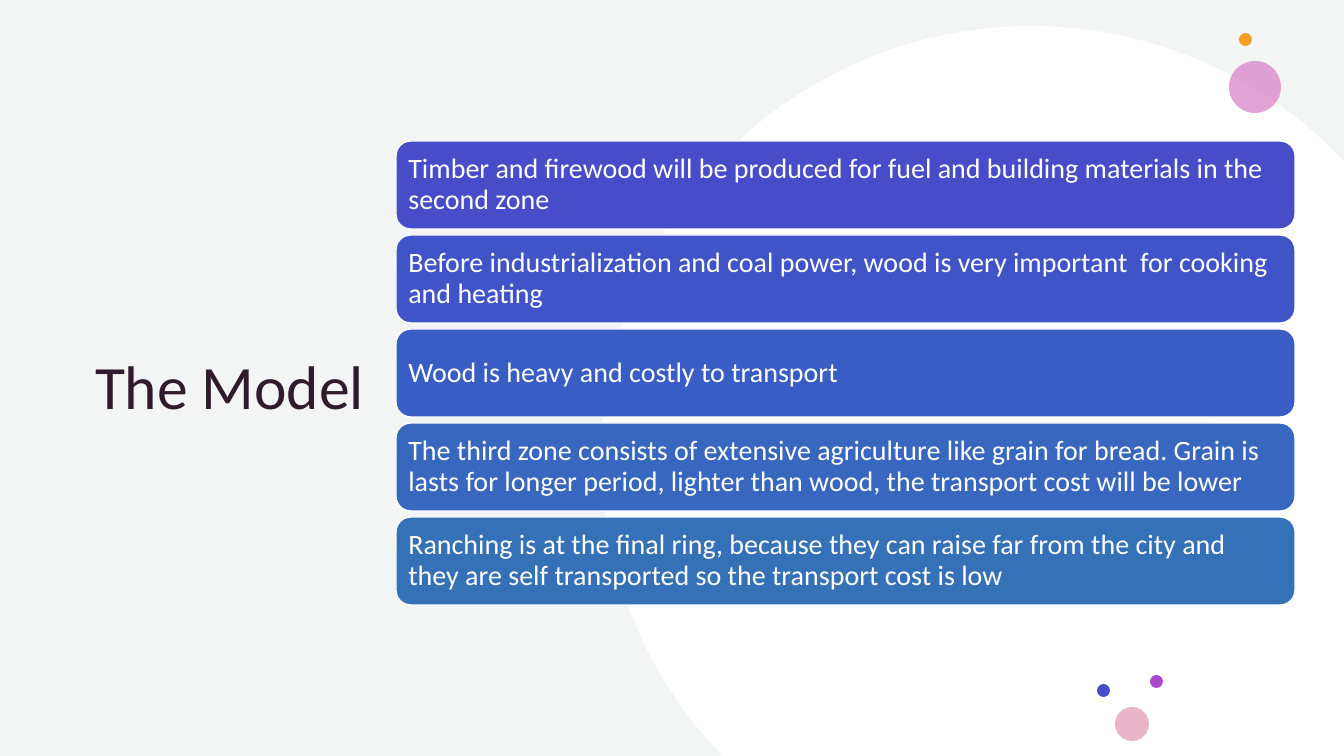
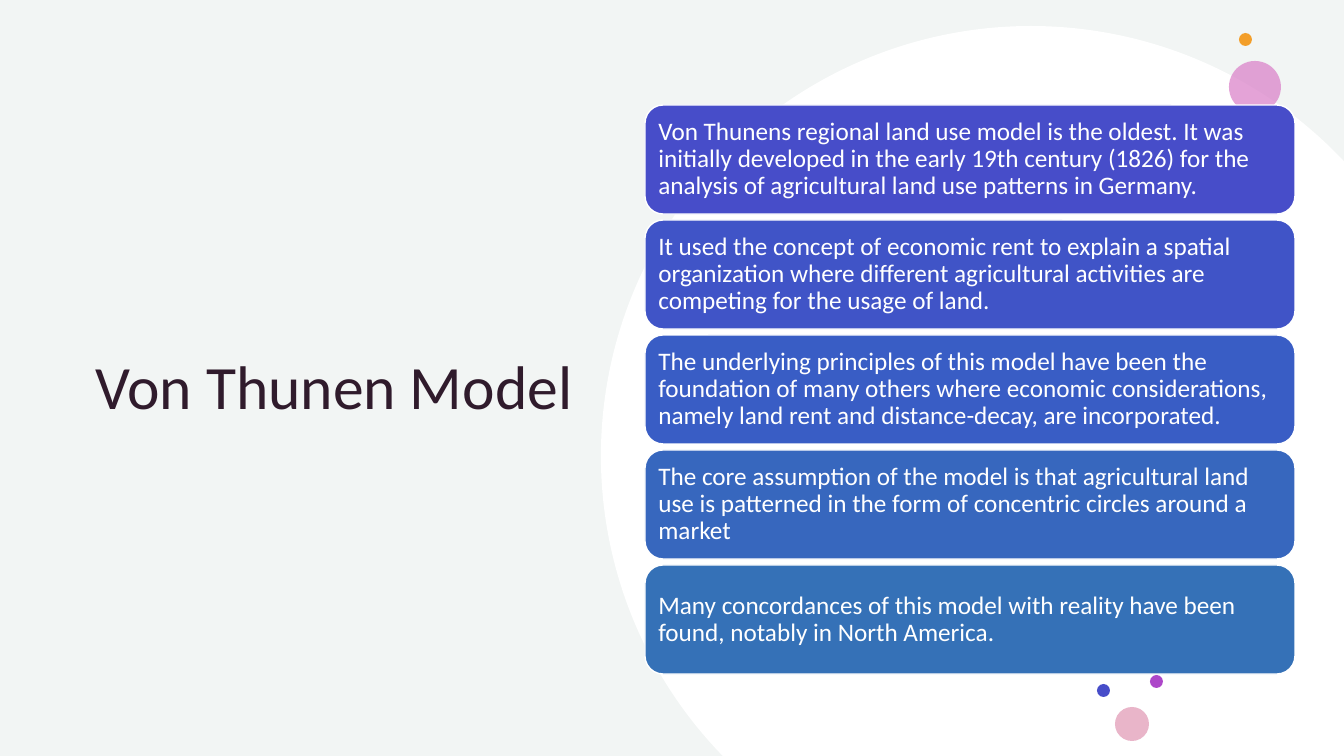
from math import acos, asin, cos, degrees, radians, sin

from lxml import etree
from pptx import Presentation
from pptx.dml.color import RGBColor
from pptx.enum.shapes import MSO_SHAPE
from pptx.enum.text import MSO_ANCHOR, PP_ALIGN
from pptx.oxml.ns import qn
from pptx.util import Pt

OVAL, CARD = MSO_SHAPE.OVAL, MSO_SHAPE.ROUNDED_RECTANGLE
MIDDLE, LEFT = MSO_ANCHOR.MIDDLE, PP_ALIGN.LEFT

# Content
SLIDES = [
    {
        "title": "The Model",
        "cards": {"left": 396, "top": 141, "width": 899, "height": 88, "pitch": 94},
        "size": 20,
        "inset": 8,
        "points": [
            "Timber and firewood will be produced for fuel and building materials in the second zone",
            "Before industrialization and coal power, wood is very important  for cooking and heating",
            "Wood is heavy and costly to transport",
            "The third zone consists of extensive agriculture like grain for bread. "
            "Grain is lasts for longer period, lighter than wood, the transport cost will be lower",
            "Ranching is at the final ring, because they can raise far from the city "
            "and they are self transported so the transport cost is low",
        ],
    },
    {
        "title": "Von Thunen Model",
        "cards": {"left": 645, "top": 105, "width": 650, "height": 109, "pitch": 115},
        "size": 18,
        "inset": 8,
        "points": [
            "Von Thunens regional land use model is the oldest. It was initially developed "
            "in the early 19th century (1826) for the analysis of agricultural land use "
            "patterns in Germany.",
            "It used the concept of economic rent to explain a spatial organization where "
            "different agricultural activities are competing for the usage of land.",
            "The underlying principles of this model have been the foundation of many others "
            "where economic considerations, namely land rent and distance-decay, are incorporated.",
            "The core assumption of the model is that agricultural land use is patterned "
            "in the form of concentric circles around a market",
            "Many concordances of this model with reality have been found, notably in North America.",
        ],
    },
]

# Shared look
THEME = {
    "font": "Calibri",
    "title_size": 44,
    "title": "301B2C",
    "background": "F2F5F4",
    "white": "FFFFFF",
    "cards": ["474DC9", "4054C7", "395DC5", "3767BE", "3571B7"],
}
WIDTH, HEIGHT = 1344, 756
EMU_PER_PX = 12192000 / WIDTH
TITLE_BOX = (85, 105, 508, 508)
# Side, top and bottom insets: the title sits below the middle of its box
TITLE_INSETS = (10, 66, 5)
DISC = {"x": 1031, "y": 456, "radius": 430}
# Left, top, diameter, colour, opacity in percent
BUBBLES = [
    (1229, 61, 52, "DA80C8", 72),
    (1239, 33, 13, "F39E29", 100),
    (1150, 675, 13, "AD47C9", 100),
    (1115, 707, 34, "E9B5C9", 100),
    (1097, 684, 13, "474DC9", 100),
]


def px(value):
    return round(value * EMU_PER_PX)


def rgb(code):
    return RGBColor.from_string(code)


def paint(sp, color, opacity=100, line=None):
    sp.shadow.inherit = False
    sp.fill.solid()
    sp.fill.fore_color.rgb = rgb(color)
    if opacity < 100:
        solid = sp.element.spPr.find(qn("a:solidFill"))
        etree.SubElement(solid[0], qn("a:alpha"), val=str(opacity * 1000))
    if line:
        sp.line.color.rgb = rgb(line)
        sp.line.width = Pt(1)
    else:
        sp.line.fill.background()


def write(sp, text, size, color, side, top, bottom):
    tf = sp.text_frame
    frame_format = {
        "word_wrap": True, "vertical_anchor": MIDDLE,
        "margin_left": px(side), "margin_right": px(side),
        "margin_top": px(top), "margin_bottom": px(bottom),
    }
    p = tf.paragraphs[0]
    r = p.add_run()
    r.text = text
    r.font.color.rgb = rgb(color)
    for target, values in (
        (tf, frame_format),
        (p, {"alignment": LEFT, "line_spacing": 0.9}),
        (r.font, {"name": THEME["font"], "size": Pt(size)}),
    ):
        for name, value in values.items():
            setattr(target, name, value)


def add_disc(s):
    """Draw the large circle, cut off at the right and bottom edges."""
    x, y, radius = DISC["x"], DISC["y"], DISC["radius"]
    bottom = 180 - degrees(asin((HEIGHT - y) / radius))
    right = 360 - degrees(acos((WIDTH - x) / radius))
    angles = [bottom, 180, 270, right]
    outline = [
        (px(x + radius * cos(radians(a))), px(y + radius * sin(radians(a))))
        for a in angles
    ]
    builder = s.shapes.build_freeform(*outline[0])
    builder.add_line_segments(outline[1:] + [(px(WIDTH), px(HEIGHT))])
    sp = builder.convert_to_shape()

    # Bend the sides between the points on the circle into arcs
    sides = list(sp.element.iter(qn("a:lnTo")))
    for side, start, end in zip(sides, angles, angles[1:]):
        arc = etree.Element(
            qn("a:arcTo"), wR=str(px(radius)), hR=str(px(radius)),
            stAng=str(round(start * 60000)), swAng=str(round((end - start) * 60000)))
        side.getparent().replace(side, arc)
    paint(sp, THEME["white"])


def add_bubbles(s):
    for left, top, diameter, color, opacity in BUBBLES:
        sp = s.shapes.add_shape(OVAL, *map(px, (left, top, diameter, diameter)))
        paint(sp, color, opacity)


def add_cards(s, content):
    box, inset = content["cards"], content["inset"]
    for i, (text, color) in enumerate(zip(content["points"], THEME["cards"])):
        top = box["top"] + i * box["pitch"]
        place = (box["left"], top, box["width"], box["height"])
        sp = s.shapes.add_shape(CARD, *map(px, place))
        paint(sp, color, line=THEME["white"])
        write(sp, text, content["size"], THEME["white"], inset, inset, inset)


def add_slide(prs, content):
    s = prs.slides.add_slide(prs.slide_layouts[6])
    title = s.shapes.add_textbox(*map(px, TITLE_BOX))
    write(title, content["title"], THEME["title_size"], THEME["title"], *TITLE_INSETS)
    add_disc(s)
    add_bubbles(s)
    add_cards(s, content)


def main():
    prs = Presentation()
    prs.slide_width, prs.slide_height = px(WIDTH), px(HEIGHT)
    background = prs.slide_master.background.fill
    background.solid()
    background.fore_color.rgb = rgb(THEME["background"])
    for content in SLIDES:
        add_slide(prs, content)
    prs.save("out.pptx")


if __name__ == "__main__":
    main()
